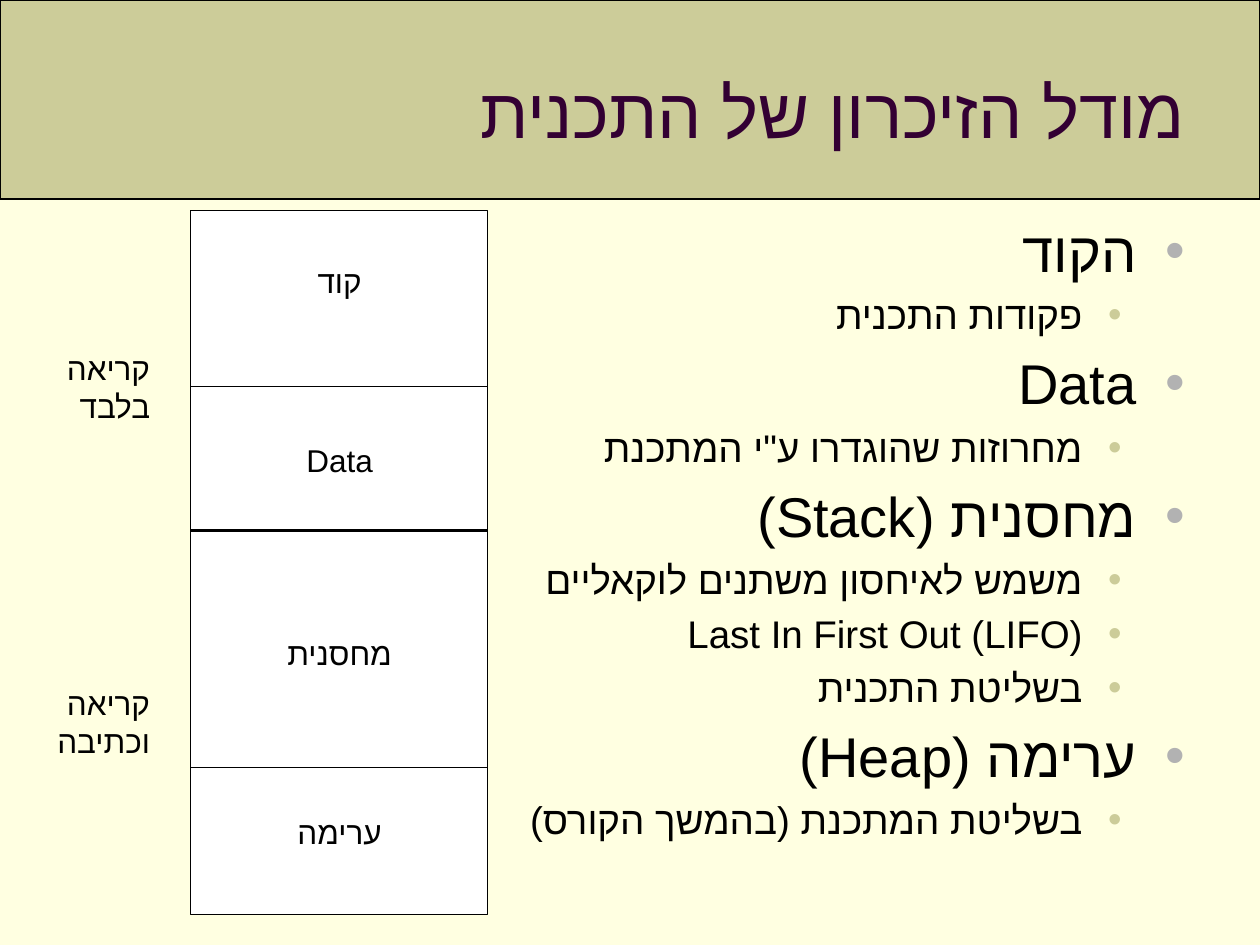
from dataclasses import dataclass

from lxml.etree import SubElement
from pptx import Presentation
from pptx.dml.color import RGBColor
from pptx.enum.shapes import MSO_CONNECTOR, MSO_SHAPE
from pptx.enum.text import MSO_ANCHOR, MSO_AUTO_SIZE, PP_ALIGN
from pptx.oxml.ns import qn
from pptx.util import Inches, Pt


@dataclass(frozen=True)
class Theme:
    background: str = "FFFFE1"
    band: str = "CCCC99"
    title: str = "330033"
    ink: str = "000000"
    paper: str = "FFFFFF"
    bullets: tuple = ("B2B2B2", "CCCC99")
    title_font: str = "Times New Roman"
    font: str = "Arial"
    title_size: int = 40
    body_sizes: tuple = (32, 22)
    label_size: int = 18
    thin: float = 0.75
    thick: float = 1.75


@dataclass(frozen=True)
class Item:
    text: str
    level: int = 0


@dataclass(frozen=True)
class Label:
    lines: tuple
    left: float
    top: float
    width: float
    height: float
    align: PP_ALIGN = PP_ALIGN.CENTER


@dataclass(frozen=True)
class Divider:
    y: float
    weight: float


T = Theme()
INDENTS = ((0.38, -0.38), (0.81, -0.31))  # margin and hanging indent per level
MEM_LEFT, MEM_TOP, MEM_WIDTH, MEM_HEIGHT = 1.51, 1.67, 2.36, 5.59

ITEMS = (
    Item("הקוד"),
    Item("פקודות התכנית", 1),
    Item("Data"),
    Item('מחרוזות שהוגדרו ע"י המתכנת', 1),
    Item("מחסנית (Stack)"),
    Item("משמש לאיחסון משתנים לוקאליים", 1),
    Item("Last In First Out (LIFO)", 1),
    Item("בשליטת התכנית", 1),
    Item("ערימה (Heap)"),
    Item("בשליטת המתכנת (בהמשך הקורס)", 1),
)
DIVIDERS = (Divider(3.07, T.thin), Divider(4.21, T.thick), Divider(6.09, T.thin))
SEGMENTS = (("קוד", 2.03), ("Data", 3.45), ("מחסנית", 4.98), ("ערימה", 6.4))
ACCESS = ((("קריאה", "בלבד"), 2.72), (("קריאה", "וכתיבה"), 5.38))
LABELS = (
    *(Label((name,), 1.59, y, 2.21, 0.4) for name, y in SEGMENTS),
    *(Label(lines, 0.32, y, 0.97, 0.71, PP_ALIGN.RIGHT) for lines, y in ACCESS),
)


def rgb(value: str) -> RGBColor:
    return RGBColor.from_string(value)


def add_box(s, left: float, top: float, width: float, height: float):
    tf = s.shapes.add_textbox(
        Inches(left), Inches(top), Inches(width), Inches(height)).text_frame
    tf.word_wrap = True
    return tf


def add_rect(s, left: float, top: float, width: float, height: float, fill: str):
    sp = s.shapes.add_shape(
        MSO_SHAPE.RECTANGLE, Inches(left), Inches(top), Inches(width), Inches(height))
    sp.shadow.inherit = False
    sp.fill.solid()
    sp.fill.fore_color.rgb = rgb(fill)
    sp.line.color.rgb = rgb(T.ink)
    sp.line.width = Pt(T.thin)


def add_divider(s, divider: Divider):
    y = Inches(divider.y)
    line = s.shapes.add_connector(
        MSO_CONNECTOR.STRAIGHT, Inches(MEM_LEFT), y, Inches(MEM_LEFT + MEM_WIDTH), y)
    line.line.color.rgb = rgb(T.ink)
    line.line.width = Pt(divider.weight)
    SubElement(line._element.spPr, qn("a:effectLst"))


def write(p, text: str, *, size: float, font: str = T.font, color: str = T.ink,
          align: PP_ALIGN = PP_ALIGN.RIGHT):
    """Fill a right-to-left paragraph with one formatted run."""
    p.alignment = align
    p._p.get_or_add_pPr().set("rtl", "1")
    r = p.add_run()
    r.text = text
    r.font.size = Pt(size)
    r.font.color.rgb = rgb(color)
    r.font.name = font
    SubElement(r._r.get_or_add_rPr(), qn("a:cs"), typeface=T.font)


def add_bullet(p, level: int, first: bool):
    pPr = p._p.get_or_add_pPr()
    margin, indent = INDENTS[level]
    p.level = level
    pPr.set("marL", str(Inches(margin)))
    pPr.set("marR", "0")
    pPr.set("indent", str(Inches(indent)))
    if not first:
        SubElement(SubElement(pPr, qn("a:spcBef")), qn("a:spcPct"), val="20000")
    SubElement(SubElement(pPr, qn("a:buClr")), qn("a:srgbClr"), val=T.bullets[level])
    SubElement(pPr, qn("a:buFont"), typeface=T.font)
    SubElement(pPr, qn("a:buChar"), char="•")


def paragraphs(tf, count: int) -> list:
    return [tf.paragraphs[0], *(tf.add_paragraph() for _ in range(count - 1))]


def add_label(s, label: Label):
    tf = add_box(s, label.left, label.top, label.width, label.height)
    tf.auto_size = MSO_AUTO_SIZE.SHAPE_TO_FIT_TEXT
    for p, text in zip(paragraphs(tf, len(label.lines)), label.lines):
        write(p, text, size=T.label_size, align=label.align)


def main():
    prs = Presentation()
    prs.slide_width, prs.slide_height = Inches(10), Inches(7.5)
    s = prs.slides.add_slide(prs.slide_layouts[6])
    s.background.fill.solid()
    s.background.fill.fore_color.rgb = rgb(T.background)

    # Title band
    add_rect(s, 0, 0, 10, 1.58, T.band)
    tf = add_box(s, 0.5, 0.25, 9, 1.25)
    tf.vertical_anchor = MSO_ANCHOR.MIDDLE
    write(tf.paragraphs[0], "מודל הזיכרון של התכנית",
          size=T.title_size, font=T.title_font, color=T.title)

    # Bulleted explanation
    tf = add_box(s, 0.5, 1.67, 9, 5.33)
    for i, (p, item) in enumerate(zip(paragraphs(tf, len(ITEMS)), ITEMS)):
        add_bullet(p, item.level, first=i == 0)
        write(p, item.text, size=T.body_sizes[item.level])

    # Memory diagram
    add_rect(s, MEM_LEFT, MEM_TOP, MEM_WIDTH, MEM_HEIGHT, T.paper)
    for divider in DIVIDERS:
        add_divider(s, divider)
    for label in LABELS:
        add_label(s, label)

    prs.save("out.pptx")


if __name__ == "__main__":
    main()
